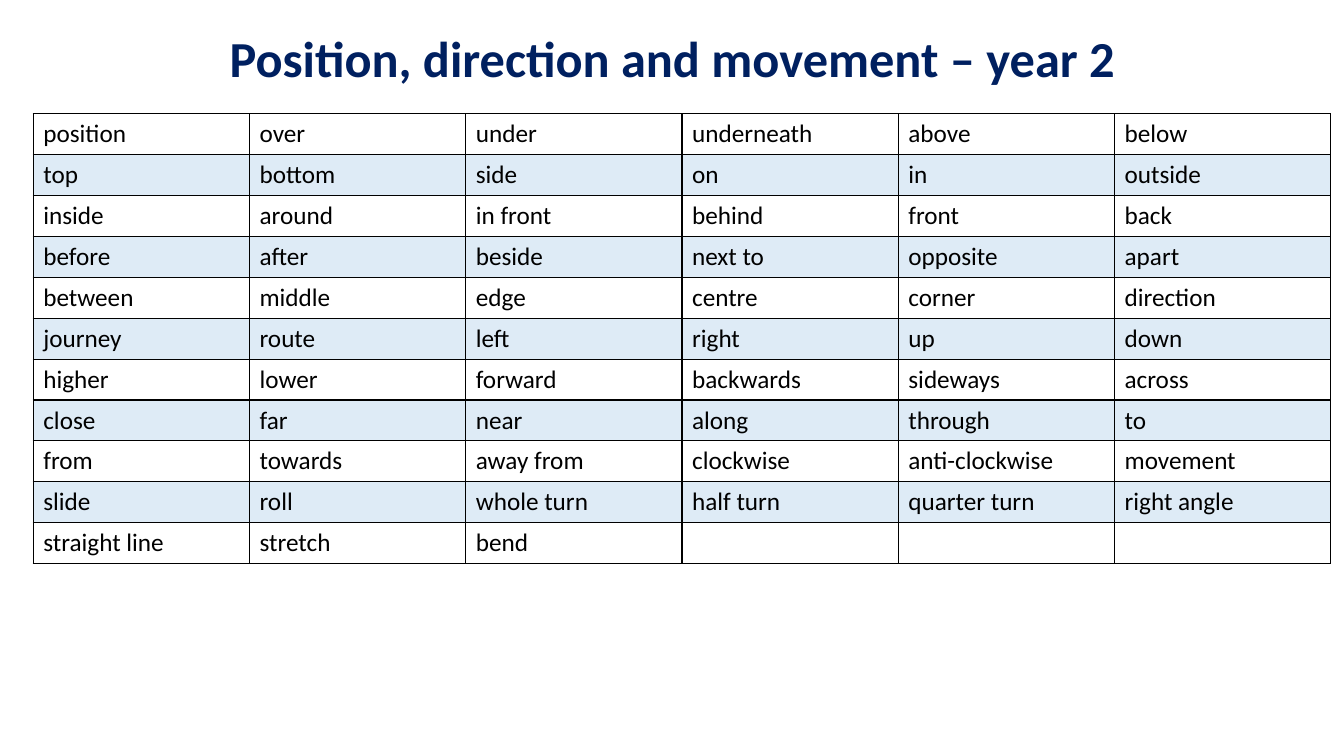
from lxml.etree import SubElement
from pptx import Presentation
from pptx.dml.color import RGBColor
from pptx.enum.text import MSO_ANCHOR, PP_ALIGN
from pptx.oxml.ns import qn
from pptx.util import Inches, Pt

COLOURS = {"title": "002060", "text": "000000", "border": "000000", "band": "5B9BD5"}
FONT = "Calibri"
BAND_OPACITY = 20
COLUMNS = 6
WORDS = [
    ["position", "over", "under", "underneath", "above", "below"],
    ["top", "bottom", "side", "on", "in", "outside"],
    ["inside", "around", "in front", "behind", "front", "back"],
    ["before", "after", "beside", "next to", "opposite", "apart"],
    ["between", "middle", "edge", "centre", "corner", "direction"],
    ["journey", "route", "left", "right", "up", "down"],
    ["higher", "lower", "forward", "backwards", "sideways", "across"],
    ["close", "far", "near", "along", "through", "to"],
    ["from", "towards", "away from", "clockwise", "anti-clockwise", "movement"],
    ["slide", "roll", "whole turn", "half turn", "quarter turn", "right angle"],
    ["straight line", "stretch", "bend"],
]


def set_font(para, size, colour, bold=False):
    para.font.name = FONT
    para.font.size = Pt(size)
    para.font.bold = bold
    para.font.color.rgb = RGBColor.from_string(COLOURS[colour])


def add_title(page, text, left, top, width, height):
    title = page.shapes.title
    title.left, title.top = Inches(left), Inches(top)
    title.width, title.height = Inches(width), Inches(height)
    frame = title.text_frame
    frame.text = text
    frame.word_wrap = True
    frame.vertical_anchor = MSO_ANCHOR.MIDDLE
    para = frame.paragraphs[0]
    para.alignment = PP_ALIGN.CENTER
    para.line_spacing = 0.9
    set_font(para, 36, "title", bold=True)


def add_borders(cell):
    properties = cell._tc.get_or_add_tcPr()
    for side in ("a:lnL", "a:lnR", "a:lnT", "a:lnB"):
        line = SubElement(properties, qn(side), w=str(Pt(1)))
        fill = SubElement(line, qn("a:solidFill"))
        SubElement(fill, qn("a:srgbClr"), val=COLOURS["border"])


def fill_cell(cell, banded):
    if not banded:
        cell.fill.background()
        return
    cell.fill.solid()
    cell.fill.fore_color.rgb = RGBColor.from_string(COLOURS["band"])
    colour = cell._tc.tcPr.find(qn("a:solidFill")).find(qn("a:srgbClr"))
    SubElement(colour, qn("a:alpha"), val=str(BAND_OPACITY * 1000))


def add_word_table(page, rows, left, top, width, height):
    table = page.shapes.add_table(
        len(rows), COLUMNS, Inches(left), Inches(top), Inches(width), Inches(height)
    ).table
    table.first_row = False
    table.horz_banding = False
    for row_index, words in enumerate(rows):
        for column in range(COLUMNS):
            cell = table.cell(row_index, column)
            add_borders(cell)
            fill_cell(cell, banded=row_index % 2 == 1)
            if column < len(words):
                cell.text = words[column]
            set_font(cell.text_frame.paragraphs[0], 18, "text")


def main():
    deck = Presentation()
    deck.slide_width, deck.slide_height = Inches(13.33), Inches(7.5)
    page = deck.slides.add_slide(deck.slide_layouts[5])
    add_title(page, "Position, direction and movement – year 2", 0.92, 0.2, 11.5, 0.81)
    add_word_table(page, WORDS, 0.33, 1.13, 12.87, 4.46)
    deck.save("out.pptx")


if __name__ == "__main__":
    main()
